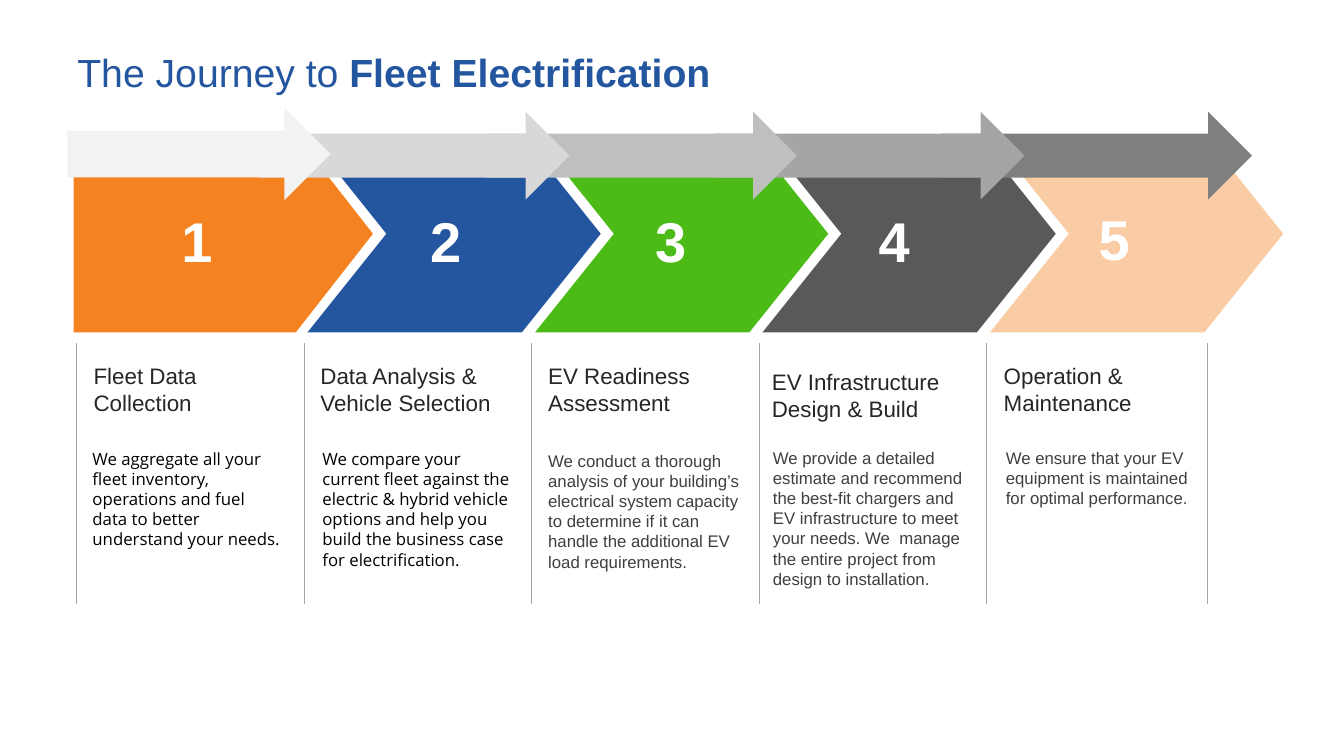
from dataclasses import dataclass

from lxml.etree import SubElement
from pptx import Presentation
from pptx.dml.color import RGBColor
from pptx.enum.shapes import MSO_CONNECTOR, MSO_SHAPE
from pptx.enum.text import MSO_ANCHOR
from pptx.oxml.ns import qn
from pptx.util import Pt


@dataclass(frozen=True)
class Theme:
    font: str = "Arial"
    body_font: str = "Open Sans"
    title: str = "2456A0"
    number: str = "FFFFFF"
    heading: str = "262626"
    body: str = "3F3F3F"
    body_dark: str = "000000"
    divider: str = "A5A5A5"
    stages: tuple = ("F58220", "2456A0", "4CBB17", "595959", "FACCA5")
    arrows: tuple = ("F2F2F2", "D8D8D8", "BFBFBF", "A5A5A5", "7F7F7F")
    title_size: int = 28
    number_size: int = 40
    heading_size: int = 16
    body_size: int = 12


theme = Theme()
STEP = 162.5  # distance from one stage to the next


def add_block(kind, left, top, width, height, color, adjustments):
    s = slide.shapes.add_shape(kind, Pt(left), Pt(top), Pt(width), Pt(height))
    s.shadow.inherit = False
    s.fill.solid()
    s.fill.fore_color.rgb = RGBColor.from_string(color)
    s.line.fill.background()
    for i, value in enumerate(adjustments):
        s.adjustments[i] = value


def add_text(left, top, width, height, runs, size, color, font=theme.font):
    """Add a one-paragraph text box; runs are (text, bold) pairs."""
    s = slide.shapes.add_textbox(Pt(left), Pt(top), Pt(width), Pt(height))
    tf = s.text_frame
    tf.word_wrap = True
    p = tf.paragraphs[0]
    for text, bold in runs:
        r = p.add_run()
        r.text = text
        r.font.name = font
        r.font.size = Pt(size)
        r.font.bold = bold
        r.font.color.rgb = RGBColor.from_string(color)
    return tf


prs = Presentation()
prs.slide_width, prs.slide_height = Pt(960), Pt(540)
slide = prs.slides.add_slide(prs.slide_layouts[6])

# Coloured stages
add_block(MSO_SHAPE.PENTAGON, 52.6, 96.5, 213.8, 141, theme.stages[0], [0.391])
for i, color in enumerate(theme.stages[1:]):
    add_block(MSO_SHAPE.CHEVRON, 219.6 + i * STEP, 96.5, 209.5, 141, color, [0.4])

# Title
tf = add_text(48.2, 1.4, 828, 104.4,
              [("The Journey to ", False), ("Fleet Electrification", True)],
              theme.title_size, theme.title)
tf.vertical_anchor = MSO_ANCHOR.MIDDLE
tf.paragraphs[0].line_spacing = 0.9

# Column dividers
for x in [54.7 + i * STEP for i in range(5)] + [862.6]:
    line = slide.shapes.add_connector(MSO_CONNECTOR.STRAIGHT,
                                      Pt(x), Pt(244.8), Pt(x), Pt(431.3))
    line.line.color.rgb = RGBColor.from_string(theme.divider)
    line.line.width = Pt(0.75)
    SubElement(line._element.spPr, qn("a:effectLst"))

# Grey arrows, last stage at the back
for i in range(3, -1, -1):
    add_block(MSO_SHAPE.RIGHT_ARROW, 185 + i * STEP, 79.9, 221.8, 62.6,
              theme.arrows[i + 1], [0.5, 0.5])
add_block(MSO_SHAPE.RIGHT_ARROW, 48.2, 77, 188, 66.2, theme.arrows[0], [0.5, 0.5])

# Stage numbers: left, top
numbers = [(122.4, 144), (300.2, 144), (460.8, 144), (620.6, 144), (777.6, 142.6)]
for i, (left, top) in enumerate(numbers, 1):
    add_text(left, top, 51.8, 55.4, [(str(i), True)], theme.number_size, theme.number)

# Stage headings: text, left, top, width
headings = [
    ("Fleet Data Collection", 59.8, 254.9, 151.2),
    ("Data Analysis & Vehicle Selection", 221.8, 254.9, 153.4),
    ("EV Readiness Assessment", 384.5, 254.9, 151.9),
    ("EV Infrastructure Design & Build", 544.3, 259.2, 153.4),
    ("Operation & Maintenance", 709.9, 254.9, 146.2),
]
for text, left, top, width in headings:
    add_text(left, top, width, 46, [(text, False)], theme.heading_size, theme.heading)

# Stage descriptions: text, left, top, width, height, colour, font
dark = (theme.body_dark, theme.body_font)
soft = (theme.body, theme.font)
descriptions = [
    ("We aggregate all your fleet inventory, operations and fuel data to better "
     "understand your needs.", 59, 316.8, 151.2, 80, *dark),
    ("We compare your current fleet against the electric & hybrid vehicle options "
     "and help you build the business case for electrification.",
     223.2, 316.8, 153.4, 94.3, *dark),
    ("We conduct a thorough analysis of your building’s electrical system capacity "
     "to determine if it can handle the additional EV load requirements.",
     384.5, 318.2, 151.2, 94.3, *soft),
    ("We provide a detailed estimate and recommend the best-fit chargers and EV "
     "infrastructure to meet your needs. We  manage the entire project from design "
     "to installation.", 545, 316.1, 162, 108.7, *soft),
    ("We ensure that your EV equipment is maintained for optimal performance.",
     711.4, 316.1, 151.2, 51.1, *soft),
]
for text, left, top, width, height, color, font in descriptions:
    add_text(left, top, width, height, [(text, False)], theme.body_size, color, font)

prs.save("out.pptx")
